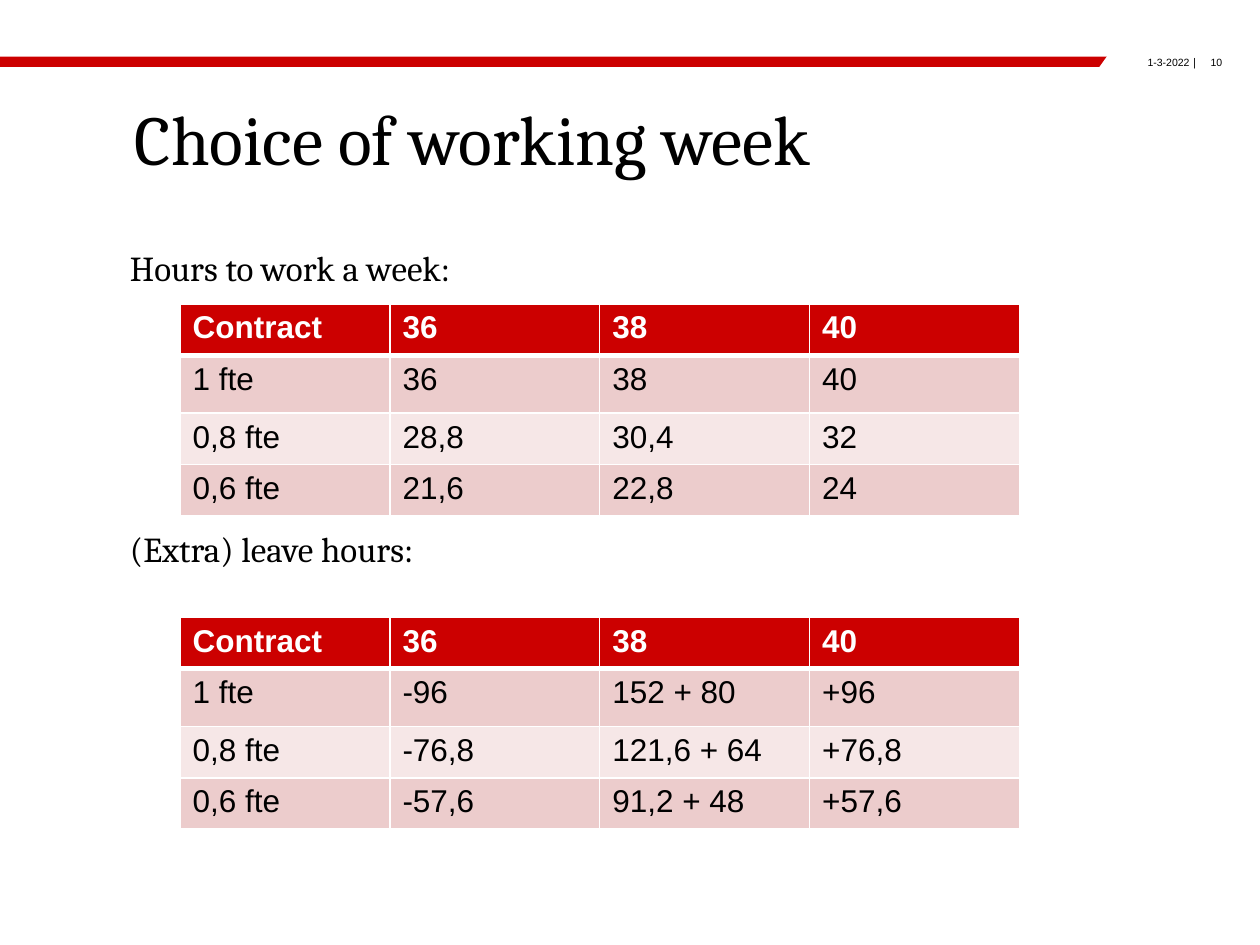
from lxml import etree
from pptx import Presentation
from pptx.dml.color import RGBColor
from pptx.enum import shapes, text
from pptx.oxml import ns
from pptx.util import Cm, Pt

RED = RGBColor(0xCC, 0x00, 0x00)
WHITE = RGBColor(0xFF, 0xFF, 0xFF)
BLACK = RGBColor(0x00, 0x00, 0x00)
PINK = RGBColor(0xEC, 0xCC, 0xCC)
PALE_PINK = RGBColor(0xF6, 0xE7, 0xE7)

SLIDE_WIDTH, SLIDE_HEIGHT = 25.4, 19.05
COLUMN_WIDTH = 4.23
ROW_HEIGHTS = [1.03, 1.17, 1.03, 1.03]
HEADER = ["Contract", "36", "38", "40"]
WORKING_HOURS = [
    ["1 fte", "36", "38", "40"],
    ["0,8 fte", "28,8", "30,4", "32"],
    ["0,6 fte", "21,6", "22,8", "24"],
]
LEAVE_HOURS = [
    ["1 fte", "-96", "152 + 80", "+96"],
    ["0,8 fte", "-76,8", "121,6 + 64", "+76,8"],
    ["0,6 fte", "-57,6", "91,2 + 48", "+57,6"],
]


def format_font(font, size, name, color=BLACK, bold=False):
    for attribute, value in {"size": Pt(size), "name": name, "bold": bold}.items():
        setattr(font, attribute, value)
    font.color.rgb = color


def paint(shape, color):
    shape.shadow.inherit = False
    shape.fill.solid()
    shape.fill.fore_color.rgb = color
    shape.line.fill.background()


def add_text(slide, words, box, size, name,
             align=text.PP_ALIGN.LEFT, anchor=text.MSO_ANCHOR.MIDDLE):
    frame = slide.shapes.add_textbox(*map(Cm, box)).text_frame
    settings = {"margin_left": 0, "margin_right": 0, "margin_top": 0,
                "margin_bottom": 0, "word_wrap": True, "vertical_anchor": anchor}
    for attribute, value in settings.items():
        setattr(frame, attribute, value)
    paragraph = frame.paragraphs[0]
    paragraph.alignment = align
    run = paragraph.add_run()
    run.text = words
    format_font(run.font, size, name)


def add_header_bar(slide):
    bar = slide.shapes.add_shape(shapes.MSO_SHAPE.RECTANGLE, 0, Cm(1.14),
                                 Cm(SLIDE_WIDTH), Cm(0.21))
    paint(bar, RED)
    # White end piece that gives the bar its slanted tip
    builder = slide.shapes.build_freeform(Cm(22.35), Cm(1.09))
    corners = [(SLIDE_WIDTH, 1.09), (SLIDE_WIDTH, 1.37), (22.15, 1.37)]
    builder.add_line_segments([(Cm(x), Cm(y)) for x, y in corners], close=True)
    paint(builder.convert_to_shape(), WHITE)


def set_borders(cell, widths):
    properties = cell._tc.get_or_add_tcPr()
    for index, (side, width) in enumerate(widths.items()):
        line = etree.Element(ns.qn(f"a:ln{side}"), w=str(Pt(width)))
        fill = etree.SubElement(line, ns.qn("a:solidFill"))
        etree.SubElement(fill, ns.qn("a:srgbClr"), val=str(WHITE))
        properties.insert(index, line)


def add_hours_table(slide, top, body):
    rows = [HEADER] + body
    table = slide.shapes.add_table(
        len(rows), len(HEADER), Cm(3.63), Cm(top),
        Cm(COLUMN_WIDTH * len(HEADER)), Cm(sum(ROW_HEIGHTS))).table
    table.horz_banding = False
    for column in table.columns:
        column.width = Cm(COLUMN_WIDTH)
    for r, values in enumerate(rows):
        table.rows[r].height = Cm(ROW_HEIGHTS[r])
        is_header = r == 0
        row_color = RED if is_header else (PALE_PINK, PINK)[r % 2]
        for c, value in enumerate(values):
            cell = table.cell(r, c)
            cell.text = value
            format_font(cell.text_frame.paragraphs[0].runs[0].font, 18, "Arial",
                        WHITE if is_header else BLACK, is_header)
            cell.fill.solid()
            cell.fill.fore_color.rgb = row_color
            set_borders(cell, {"L": 1, "R": 1, "T": 3 if r == 1 else 1,
                               "B": 3 if is_header else 1})


def main():
    presentation = Presentation()
    presentation.slide_width = Cm(SLIDE_WIDTH)
    presentation.slide_height = Cm(SLIDE_HEIGHT)
    slide = presentation.slides.add_slide(presentation.slide_layouts[6])

    # Header with date and page number
    add_header_bar(slide)
    for words, left, width, name in [("1-3-2022", 21.87, 2.11, "Arial"),
                                     ("|", 24.05, 0.15, "DejaVu Sans"),
                                     ("10", 24.1, 0.54, "Arial")]:
        align = text.PP_ALIGN.LEFT if words == "|" else text.PP_ALIGN.RIGHT
        add_text(slide, words, (left, 1.12, width, 0.38), 6, name,
                 align, text.MSO_ANCHOR.TOP)

    # Title
    add_text(slide, "Choice of working week", (2.72, 1.66, 21.9, 2.21), 40, "Cambria")

    # Each table with its label
    for label, label_top, table_top, body in [
            ("Hours to work a week:", 4.89, 6.13, WORKING_HOURS),
            ("(Extra) leave hours:", 10.55, 12.45, LEAVE_HOURS)]:
        add_text(slide, label, (2.62, label_top, 21.9, 1), 20, "Cambria")
        add_hours_table(slide, table_top, body)

    presentation.save("out.pptx")


if __name__ == "__main__":
    main()
